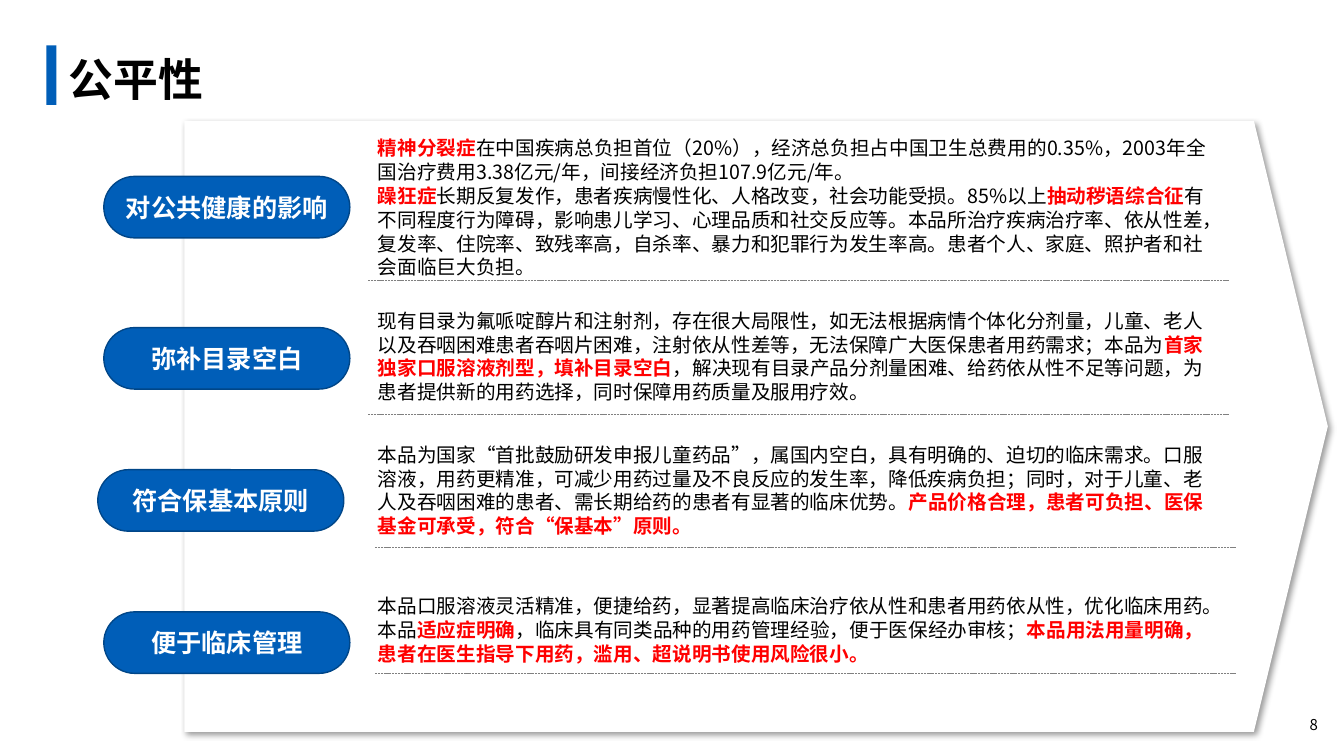
from dataclasses import dataclass

from lxml.etree import SubElement as Sub
from pptx import Presentation
from pptx.dml.color import RGBColor as RGB
from pptx.enum.dml import MSO_LINE as Dash
from pptx.enum.shapes import MSO_CONNECTOR as Conn, MSO_SHAPE as Kind
from pptx.enum.text import MSO_ANCHOR as Anchor, MSO_AUTO_SIZE as Auto, PP_ALIGN as Align
from pptx.oxml.ns import qn
from pptx.util import Inches, Pt

TITLE = "公平性"
PAGE = "8"
# label, pill left and top, text top and height, rule left and top, paragraphs;
# parts between bars are stressed
ROWS = [
    ("对公共健康的影响", (1.03, 1.75), (1.3, 1.51), (3.65, 2.78), [
        "|精神分裂症|在中国疾病总负担首位（20%），经济总负担占中国卫生总费用的0.35%，"
        "2003年全国治疗费用3.38亿元/年，间接经济负担107.9亿元/年。",
        "|躁狂症|长期反复发作，患者疾病慢性化、人格改变，社会功能受损。85%以上|抽动秽语综合征|"
        "有不同程度行为障碍，影响患儿学习、心理品质和社交反应等。本品所治疗疾病治疗率、依从性差，"
        "复发率、住院率、致残率高，自杀率、暴力和犯罪行为发生率高。"
        "患者个人、家庭、照护者和社会面临巨大负担。",
    ]),
    ("弥补目录空白", (1.03, 3.25), (3.01, 1.04), (3.65, 4.11), [
        "现有目录为氟哌啶醇片和注射剂，存在很大局限性，如无法根据病情个体化分剂量，"
        "儿童、老人以及吞咽困难患者吞咽片困难，注射依从性差等，无法保障广大医保患者用药需求；"
        "本品为|首家独家口服溶液剂型，填补目录空白|，解决现有目录产品分剂量困难、"
        "给药依从性不足等问题，为患者提供新的用药选择，同时保障用药质量及服用疗效。",
    ]),
    ("符合保基本原则", (0.97, 4.66), (4.34, 1.04), (3.72, 5.43), [
        "本品为国家“首批鼓励研发申报儿童药品”，属国内空白，具有明确的、迫切的临床需求。"
        "口服溶液，用药更精准，可减少用药过量及不良反应的发生率，降低疾病负担；同时，"
        "对于儿童、老人及吞咽困难的患者、需长期给药的患者有显著的临床优势。"
        "|产品价格合理，患者可负担、医保基金可承受，符合“保基本”原则。",
    ]),
    ("便于临床管理", (1.03, 6.07), (5.84, 0.81), (3.72, 6.68), [
        "本品口服溶液灵活精准，便捷给药，显著提高临床治疗依从性和患者用药依从性，优化临床用药。"
        "本品|适应症明确|，临床具有同类品种的用药管理经验，便于医保经办审核；"
        "|本品用法用量明确，患者在医生指导下用药，滥用、超说明书使用风险很小。",
    ]),
]


@dataclass(frozen=True)
class Theme:
    blue: str = "005EB8"
    edge: str = "004688"
    rule: str = "808080"
    ink: str = "000000"
    paper: str = "FFFFFF"
    stress: str = "FF0000"
    font: str = "Noto Sans CJK SC"
    num_font: str = "Noto Sans CJK JP"
    title: float = 32
    label: float = 18
    body: float = 14
    lead: float = 17
    num: float = 10.7


T = Theme()
PILL = (2.44, 0.61)
TEXT_X, TEXT_W = 3.65, 8.46
RULE_W = 8.54


def style(obj, **vals):
    for key, val in vals.items():
        setattr(obj, key, val)


def add_run(par, text, size, color, bold=False, face=T.font):
    run = par.add_run()
    run.text = text
    style(run.font, name=face, size=Pt(size), bold=bold)
    run.font.color.rgb = RGB.from_string(color)
    Sub(run.font._element, qn("a:ea"), typeface=face)


def add_shape(slide, kind, box, fill, line=None):
    shape = slide.shapes.add_shape(kind, *map(Inches, box))
    shape.shadow.inherit = False
    shape.fill.solid()
    shape.fill.fore_color.rgb = RGB.from_string(fill)
    if line:
        shape.line.color.rgb = RGB.from_string(line)
        shape.line.width = Pt(1)
    else:
        shape.line.fill.background()
    return shape


def add_box(slide, box):
    frame = slide.shapes.add_textbox(*map(Inches, box)).text_frame
    frame.word_wrap = True
    return frame


def cast_shadow(shape):
    effects = shape._element.spPr.find(qn("a:effectLst"))
    outer = Sub(effects, qn("a:outerShdw"), blurRad=str(Pt(4)), dist=str(Pt(3)),
                dir=str(45 * 60000), algn="tl", rotWithShape="0")
    color = Sub(outer, qn("a:srgbClr"), val=T.ink)
    Sub(color, qn("a:alpha"), val="40000")


def add_title(slide):
    title = slide.shapes.title
    style(title, left=Inches(0.58), top=Inches(0.45), width=Inches(10.8), height=Inches(0.65))
    style(title.text_frame, word_wrap=True, auto_size=Auto.NONE, vertical_anchor=Anchor.MIDDLE)
    par = title.text_frame.paragraphs[0]
    par.alignment = Align.LEFT
    add_run(par, TITLE, T.title, T.ink, True)


def add_page(slide):
    frame = add_box(slide, (12.53, 6.99, 0.67, 0.4))
    style(frame, vertical_anchor=Anchor.MIDDLE, margin_left=Inches(0.13),
          margin_right=Inches(0.13), margin_top=Inches(0.07), margin_bottom=Inches(0.07))
    par = frame.paragraphs[0]
    par.alignment = Align.RIGHT
    add_run(par, PAGE, T.num, T.ink, face=T.num_font)


def add_pill(slide, label, spot):
    pill = add_shape(slide, Kind.ROUNDED_RECTANGLE, spot + PILL, T.blue, T.edge)
    pill.adjustments[0] = 0.5
    pill.text_frame.vertical_anchor = Anchor.MIDDLE
    par = pill.text_frame.paragraphs[0]
    par.alignment = Align.CENTER
    add_run(par, label, T.label, T.paper, True)


def add_rule(slide, x, y):
    rule = slide.shapes.add_connector(Conn.STRAIGHT, *map(Inches, (x, y, x + RULE_W, y)))
    rule.line.color.rgb = RGB.from_string(T.rule)
    style(rule.line, width=Pt(0.5), dash_style=Dash.SQUARE_DOT)
    Sub(rule._element.spPr, qn("a:effectLst"))


def add_body(slide, top, height, texts):
    frame = add_box(slide, (TEXT_X, top, TEXT_W, height))
    for i, text in enumerate(texts):
        par = frame.add_paragraph() if i else frame.paragraphs[0]
        par.line_spacing = Pt(T.lead)
        for j, part in enumerate(text.split("|")):
            if part:
                bold = j % 2 == 1
                add_run(par, part, T.body, T.stress if bold else T.ink, bold)


def main():
    deck = Presentation()
    style(deck, slide_width=Inches(13.33), slide_height=Inches(7.5))
    slide = deck.slides.add_slide(deck.slide_layouts[5])
    add_shape(slide, Kind.RECTANGLE, (0.46, 0.45, 0.1, 0.59), T.blue)
    panel = add_shape(slide, Kind.PENTAGON, (1.83, 1.2, 11.34, 6.06), T.paper)
    panel.adjustments[0] = 0.121
    cast_shadow(panel)
    add_title(slide)
    add_page(slide)
    for label, spot, (top, height), rule, texts in ROWS:
        add_pill(slide, label, spot)
        add_rule(slide, *rule)
        add_body(slide, top, height, texts)
    deck.save("out.pptx")


if __name__ == "__main__":
    main()
